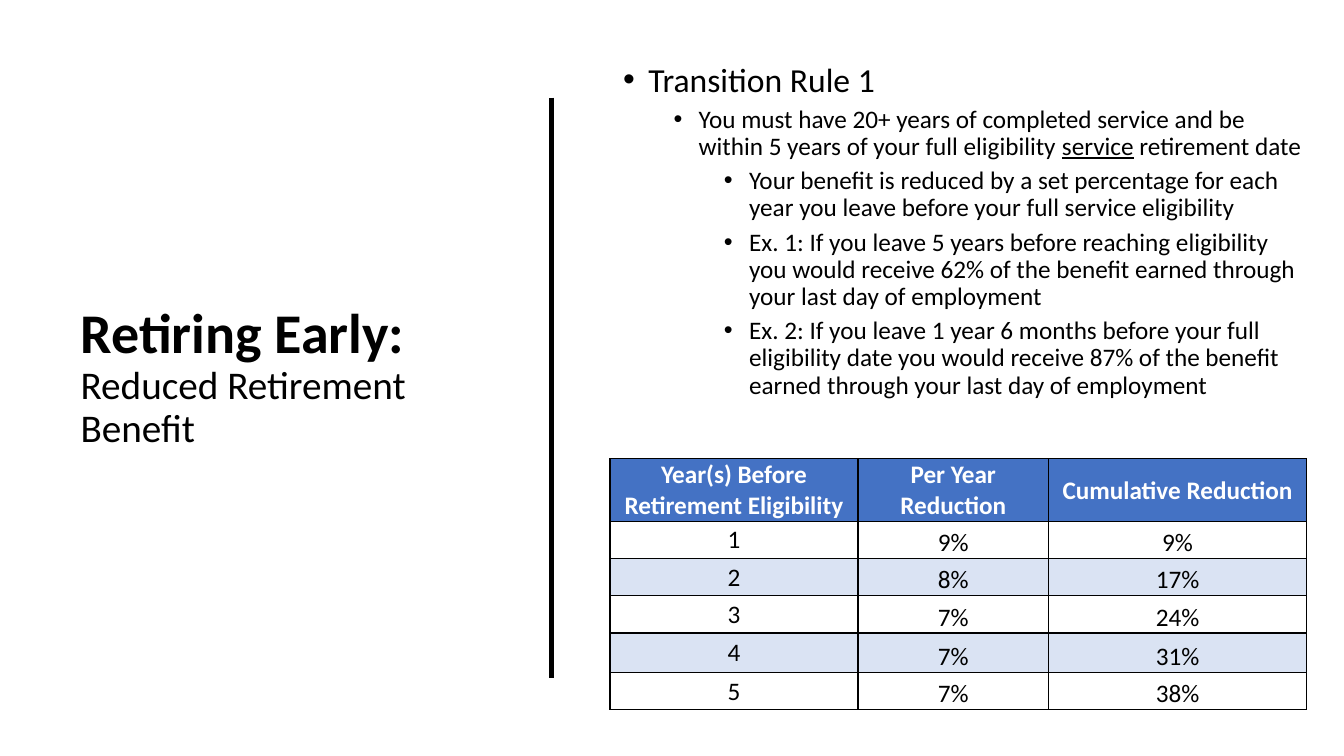
from dataclasses import dataclass

from lxml.etree import SubElement
from pptx import Presentation
from pptx.dml.color import RGBColor
from pptx.enum.shapes import MSO_CONNECTOR
from pptx.enum.text import MSO_ANCHOR, MSO_AUTO_SIZE, PP_ALIGN
from pptx.oxml import parse_xml
from pptx.oxml.ns import nsdecls, qn
from pptx.util import Inches, Pt

# Content
TITLE = ("Retiring Early: ", "Reduced Retirement Benefit")

# Each bullet: level, then runs of (text, underlined)
BULLETS = [
    (0, [("Transition Rule 1", False)]),
    (1, [("You must have 20+ years of completed service and be within 5 years "
          "of your full eligibility ", False),
         ("service", True),
         (" retirement date", False)]),
    (2, [("Your benefit is reduced by a set percentage for each year you leave "
          "before your full service eligibility", False)]),
    (2, [("Ex. 1: If you leave 5 years before reaching eligibility you would "
          "receive 62% of the benefit earned through your last day of employment", False)]),
    (2, [("Ex. 2: If you leave 1 year 6 months before your full eligibility date "
          "you would receive 87% of the benefit earned through your last day of "
          "employment", False)]),
]

REDUCTIONS = [
    ("Year(s) Before Retirement Eligibility", "Per Year Reduction", "Cumulative Reduction"),
    ("1", "9%", "9%"),
    ("2", "8%", "17%"),
    ("3", "7%", "24%"),
    ("4", "7%", "31%"),
    ("5", "7%", "38%"),
]
COLUMN_WIDTHS = (2.46, 1.89, 2.56)
ROW_HEIGHTS = (0.59, 0.37, 0.37, 0.37, 0.39, 0.37)


@dataclass(frozen=True)
class Theme:
    font: str = "Calibri"
    ink: str = "000000"
    paper: str = "FFFFFF"
    header: str = "4472C4"
    band: str = "DAE3F3"
    title_size: int = 40
    subtitle_size: int = 28
    lead_size: int = 24
    text_size: int = 18
    line_spacing: float = 0.9


THEME = Theme()


def add_span(para, text, size, color=THEME.ink, bold=False, underline=False):
    span = para.add_run()
    span.text = text
    span.font.name = THEME.font
    span.font.size = Pt(size)
    span.font.color.rgb = RGBColor.from_string(color)
    span.font.bold = bold
    if underline:
        span.font.underline = True


def place(box, left, top, width, height):
    box.left, box.top = Inches(left), Inches(top)
    box.width, box.height = Inches(width), Inches(height)
    frame = box.text_frame
    frame.word_wrap = True
    frame.auto_size = MSO_AUTO_SIZE.NONE
    frame.vertical_anchor = MSO_ANCHOR.MIDDLE
    return frame


def set_bullet(para, level):
    properties = para._p.get_or_add_pPr()
    properties.set("marL", str(Inches(0.25 + 0.5 * level)))
    properties.set("indent", str(Inches(-0.25)))
    SubElement(properties, qn("a:buFont")).set("typeface", "Arial")
    SubElement(properties, qn("a:buChar")).set("char", "•")


def add_borders(cell):
    properties = cell._tc.get_or_add_tcPr()
    for position, side in enumerate(("lnL", "lnR", "lnT", "lnB")):
        properties.insert(position, parse_xml(
            f'<a:{side} {nsdecls("a")} w="{Pt(1)}"><a:solidFill>'
            f'<a:srgbClr val="{THEME.ink}"/></a:solidFill></a:{side}>'))


def add_title(page):
    para = place(page.shapes.title, 0.7, 2.21, 4, 3.08).paragraphs[0]
    para.alignment = PP_ALIGN.LEFT
    para.line_spacing = THEME.line_spacing
    add_span(para, TITLE[0], THEME.title_size, bold=True)
    add_span(para, TITLE[1], THEME.subtitle_size)


def add_bullets(page):
    frame = place(page.placeholders[1], 6.08, 0.51, 7.02, 3.57)
    for index, (level, spans) in enumerate(BULLETS):
        para = frame.add_paragraph() if index else frame.paragraphs[0]
        para.level = level
        para.line_spacing = THEME.line_spacing
        para.space_before = Pt(5 if level else 10)
        set_bullet(para, level)
        size = THEME.text_size if level else THEME.lead_size
        for text, underline in spans:
            add_span(para, text, size, underline=underline)


def add_reductions(page):
    table = page.shapes.add_table(
        len(REDUCTIONS), len(COLUMN_WIDTHS), Inches(6.05), Inches(4.55),
        Inches(sum(COLUMN_WIDTHS)), Inches(sum(ROW_HEIGHTS))).table
    for column, width in zip(table.columns, COLUMN_WIDTHS):
        column.width = Inches(width)
    for row, height in zip(table.rows, ROW_HEIGHTS):
        row.height = Inches(height)

    for row_index, values in enumerate(REDUCTIONS):
        is_header = row_index == 0
        banded = THEME.paper if row_index % 2 else THEME.band
        for column_index, text in enumerate(values):
            cell = table.cell(row_index, column_index)
            centred = is_header or column_index == 0
            cell.vertical_anchor = MSO_ANCHOR.MIDDLE if centred else MSO_ANCHOR.BOTTOM
            cell.margin_left = cell.margin_right = cell.margin_top = Inches(0.01)
            cell.margin_bottom = 0
            cell.fill.solid()
            cell.fill.fore_color.rgb = RGBColor.from_string(
                THEME.header if is_header else banded)
            add_borders(cell)
            para = cell.text_frame.paragraphs[0]
            para.alignment = PP_ALIGN.CENTER
            add_span(para, text, THEME.text_size,
                     THEME.paper if is_header else THEME.ink, bold=is_header)


def add_divider(page):
    divider = page.shapes.add_connector(
        MSO_CONNECTOR.STRAIGHT, Inches(5.47), Inches(0.97), Inches(5.47), Inches(6.73))
    divider.line.color.rgb = RGBColor.from_string(THEME.ink)
    divider.line.width = Pt(3)
    SubElement(divider._element.spPr, qn("a:effectLst"))


def main():
    deck = Presentation()
    deck.slide_width, deck.slide_height = Inches(13.33), Inches(7.5)
    page = deck.slides.add_slide(deck.slide_layouts[1])
    add_title(page)
    add_bullets(page)
    add_reductions(page)
    add_divider(page)
    deck.save("out.pptx")


if __name__ == "__main__":
    main()
